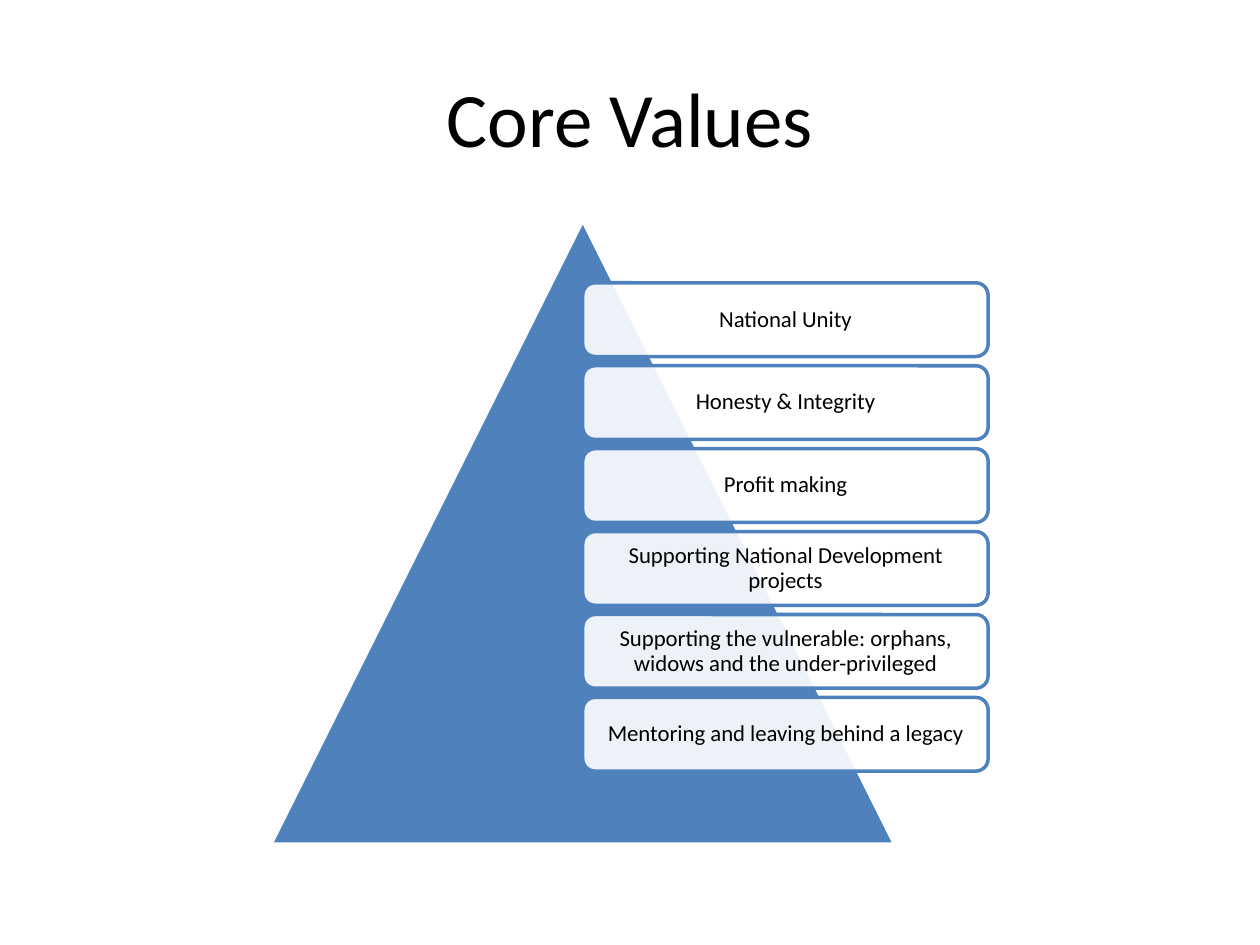
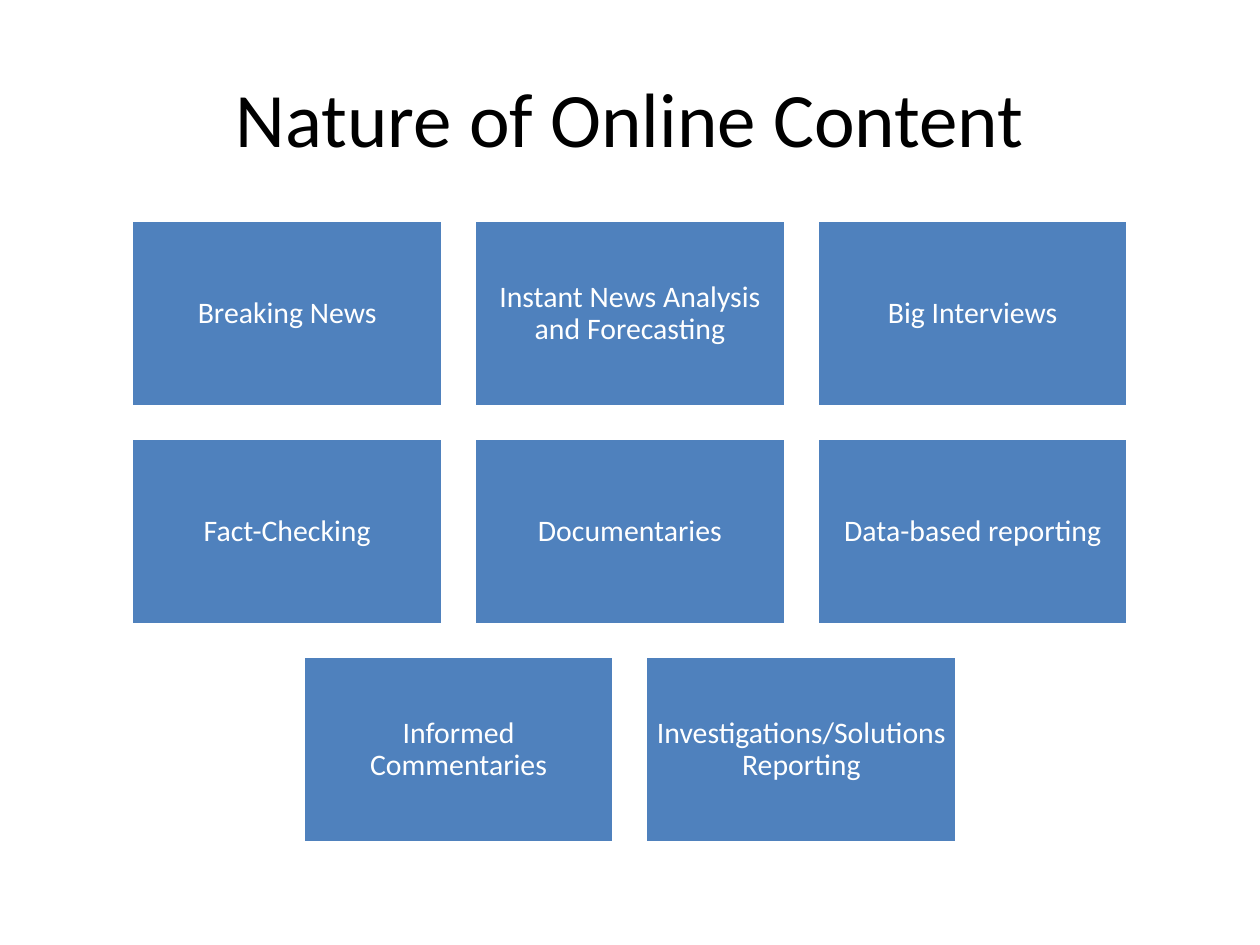
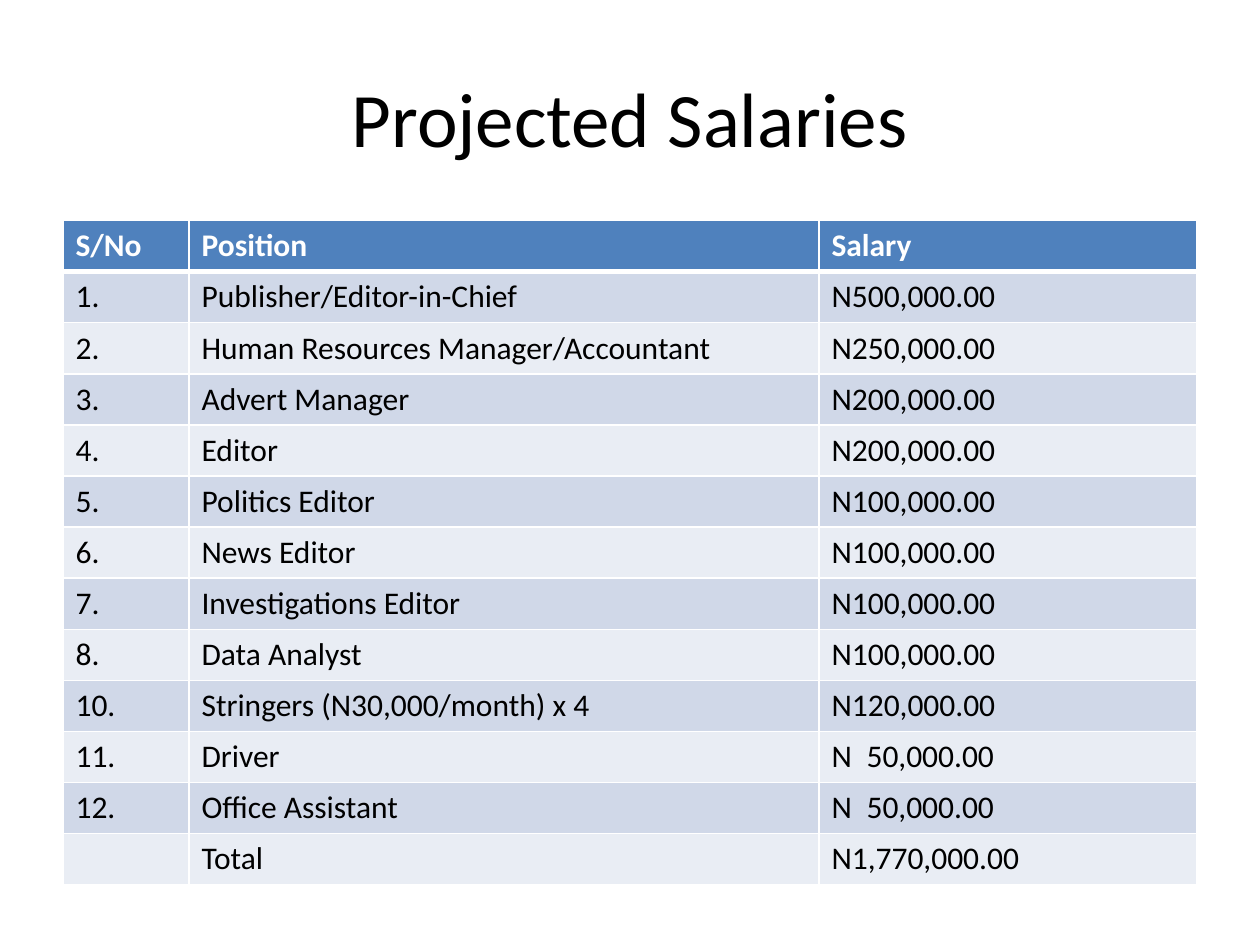
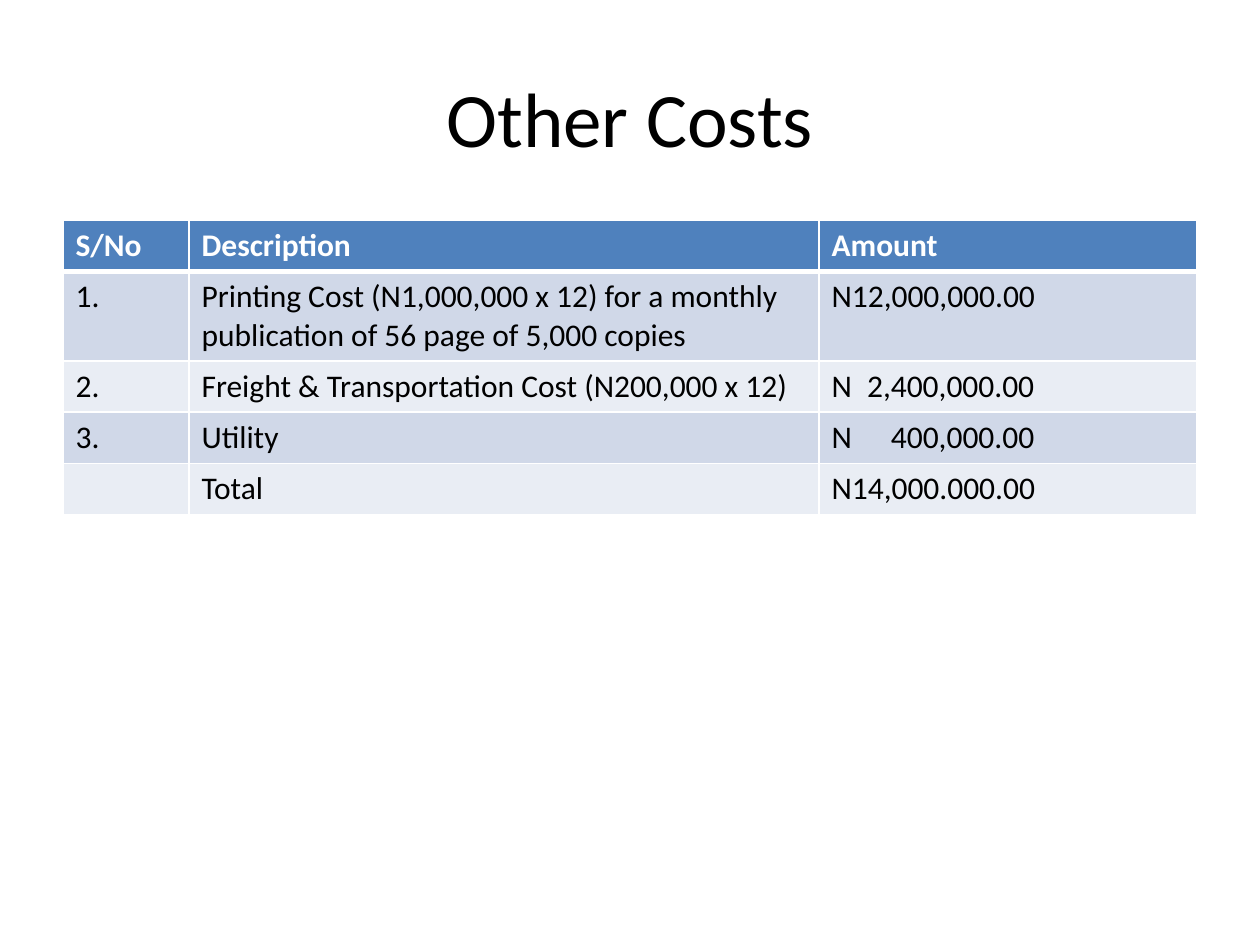
from lxml import etree
from pptx import Presentation
from pptx.dml.color import RGBColor
from pptx.enum.shapes import MSO_SHAPE
from pptx.enum.text import MSO_ANCHOR, PP_ALIGN
from pptx.oxml.ns import qn
from pptx.util import Inches, Pt

RECTANGLE = MSO_SHAPE.RECTANGLE
ROUNDED = MSO_SHAPE.ROUNDED_RECTANGLE
TRIANGLE = MSO_SHAPE.ISOSCELES_TRIANGLE
MIDDLE = MSO_ANCHOR.MIDDLE
CENTER = PP_ALIGN.CENTER

# Shared look
FONT = "Calibri"
BLUE, WHITE, BLACK = "4F81BD", "FFFFFF", "000000"
BANDS = ("D0D8E8", "E9EDF4")
SLIDE_WIDTH, SLIDE_HEIGHT = 10, 7.5
MARGIN = 0.5
CONTENT_WIDTH = SLIDE_WIDTH - 2 * MARGIN
CONTENT_TOP = 1.75
TITLE_ONLY = 5

# Table grid: column widths and the height of one row
COLUMN_WIDTHS = (1, 5, 3)
ROW_HEIGHT = 5.27 / 13

VALUES = (
    "National Unity",
    "Honesty & Integrity",
    "Profit making",
    "Supporting National Development projects",
    "Supporting the vulnerable: orphans, widows and the under-privileged",
    "Mentoring and leaving behind a legacy",
)
CONTENT_KINDS = (
    "Breaking News", "Instant News Analysis and Forecasting", "Big Interviews",
    "Fact-Checking", "Documentaries", "Data-based reporting",
    "Informed Commentaries", "Investigations/Solutions Reporting",
)
SALARIES = (
    ("S/No", "Position", "Salary"),
    ("1.", "Publisher/Editor-in-Chief", "N500,000.00"),
    ("2.", "Human Resources Manager/Accountant", "N250,000.00"),
    ("3.", "Advert Manager", "N200,000.00"),
    ("4.", "Editor", "N200,000.00"),
    ("5.", "Politics Editor", "N100,000.00"),
    ("6.", "News Editor", "N100,000.00"),
    ("7.", "Investigations Editor", "N100,000.00"),
    ("8.", "Data Analyst", "N100,000.00"),
    ("10.", "Stringers (N30,000/month) x 4", "N120,000.00"),
    ("11.", "Driver", "N\t50,000.00"),
    ("12.", "Office Assistant", "N\t50,000.00"),
    ("", "Total", "N1,770,000.00"),
)
COSTS = (
    ("S/No", "Description", "Amount"),
    ("1.", "Printing Cost (N1,000,000 x 12) for a monthly publication "
           "of 56 page of 5,000 copies", "N12,000,000.00"),
    ("2.", "Freight & Transportation Cost (N200,000 x 12)", "N\t2,400,000.00"),
    ("3.", "Utility", "N\t400,000.00"),
    ("", "Total", "N14,000.000.00"),
)


def color(value):
    return RGBColor.from_string(value)


def set_attributes(target, values):
    for name, value in values.items():
        setattr(target, name, value)


def write(text_frame, text, size, font_color, bold=False, **paragraph_format):
    """Fill a text frame with one formatted paragraph."""
    paragraph = text_frame.paragraphs[0]
    set_attributes(paragraph, paragraph_format)
    run = paragraph.add_run()
    run.text = text
    set_attributes(run.font, {"name": FONT, "size": Pt(size), "bold": bold})
    run.font.color.rgb = color(font_color)
    return paragraph


def add_titled_slide(presentation, title):
    slide = presentation.slides.add_slide(presentation.slide_layouts[TITLE_ONLY])
    shape = slide.shapes.title
    set_attributes(shape, {
        "left": Inches(MARGIN), "top": Inches(0.3),
        "width": Inches(CONTENT_WIDTH), "height": Inches(1.25),
    })
    shape.text_frame.vertical_anchor = MIDDLE
    write(shape.text_frame, title, 44, BLACK, alignment=CENTER)
    return slide


def add_block(slide, kind, box, fill, line, opacity=100):
    """Add a preset shape with a flat fill and a 2 pt outline."""
    shape = slide.shapes.add_shape(kind, *map(Inches, box))
    shape.shadow.inherit = False
    shape.fill.solid()
    shape.fill.fore_color.rgb = color(fill)
    if opacity < 100:
        fill_color = shape.fill._xPr.find(qn("a:solidFill"))[0]
        etree.SubElement(fill_color, qn("a:alpha"), val=str(opacity * 1000))
    shape.line.color.rgb = color(line)
    shape.line.width = Pt(2)
    return shape


def label(shape, text, size, font_color, inset):
    """Centre a text in a shape."""
    sides = ("left", "top", "right", "bottom")
    set_attributes(shape.text_frame, {
        "word_wrap": True, "vertical_anchor": MIDDLE,
        **{f"margin_{side}": Inches(inset) for side in sides},
    })
    write(shape.text_frame, text, size, font_color,
          alignment=CENTER, line_spacing=0.9)


def add_pyramid(slide, values):
    """Add a triangle with a stack of boxes that starts at its apex line."""
    side, left = 4.95, 2.15
    add_block(slide, TRIANGLE, (left, CONTENT_TOP, side, side), BLUE, WHITE)
    height = 0.585
    pitch = height * 9 / 8
    for index, value in enumerate(values):
        top = CONTENT_TOP + side / 10 + index * pitch
        box = (left + side / 2, top, side * 0.65, height)
        shape = add_block(slide, ROUNDED, box, WHITE, BLUE, opacity=90)
        label(shape, value, 13, BLACK, 0.05)


def add_cards(slide, texts, columns=3):
    """Add equal cards in rows, each row centred on the slide."""
    width, height, gap = 2.47, 1.48, 0.25
    for start in range(0, len(texts), columns):
        row = texts[start:start + columns]
        left = (SLIDE_WIDTH - len(row) * (width + gap) + gap) / 2
        top = CONTENT_TOP + start // columns * (height + gap)
        for column, text in enumerate(row):
            box = (left + column * (width + gap), top, width, height)
            label(add_block(slide, RECTANGLE, box, BLUE, WHITE), text, 17, WHITE, 0.07)


def set_borders(cell, widths):
    properties = cell._tc.get_or_add_tcPr()
    for side, width in widths.items():
        line = etree.SubElement(properties, qn(f"a:ln{side}"), w=str(Pt(width)))
        fill = etree.SubElement(line, qn("a:solidFill"))
        etree.SubElement(fill, qn("a:srgbClr"), val=WHITE)


def add_right_tab(paragraph, position):
    properties = paragraph._p.get_or_add_pPr()
    tabs = etree.SubElement(properties, qn("a:tabLst"))
    etree.SubElement(tabs, qn("a:tab"), pos=str(Inches(position)), algn="r")


def add_money_table(slide, rows, amount_width):
    """Add a banded table; tabbed amounts end at amount_width."""
    box = (MARGIN, CONTENT_TOP, CONTENT_WIDTH, ROW_HEIGHT * len(rows))
    table = slide.shapes.add_table(
        len(rows), len(COLUMN_WIDTHS), *map(Inches, box)).table
    for column, width in zip(table.columns, COLUMN_WIDTHS):
        column.width = Inches(width)
    for row_index, row in enumerate(rows):
        header = row_index == 0
        fill = BLUE if header else BANDS[(row_index - 1) % 2]
        top = 3 if row_index == 1 else 1
        borders = {"L": 1, "R": 1, "T": top, "B": 3 if header else 1}
        for column_index, text in enumerate(row):
            cell = table.cell(row_index, column_index)
            set_borders(cell, borders)
            cell.fill.solid()
            cell.fill.fore_color.rgb = color(fill)
            if text:
                paragraph = write(cell.text_frame, text, 18,
                                  WHITE if header else BLACK, bold=header)
                if "\t" in text:
                    add_right_tab(paragraph, amount_width)


def main():
    presentation = Presentation()
    presentation.slide_width = Inches(SLIDE_WIDTH)
    presentation.slide_height = Inches(SLIDE_HEIGHT)

    add_pyramid(add_titled_slide(presentation, "Core Values"), VALUES)
    add_cards(add_titled_slide(presentation, "Nature of Online Content"), CONTENT_KINDS)
    add_money_table(add_titled_slide(presentation, "Projected Salaries"), SALARIES, 1.29)
    add_money_table(add_titled_slide(presentation, "Other Costs"), COSTS, 1.61)

    presentation.save("out.pptx")


if __name__ == "__main__":
    main()
